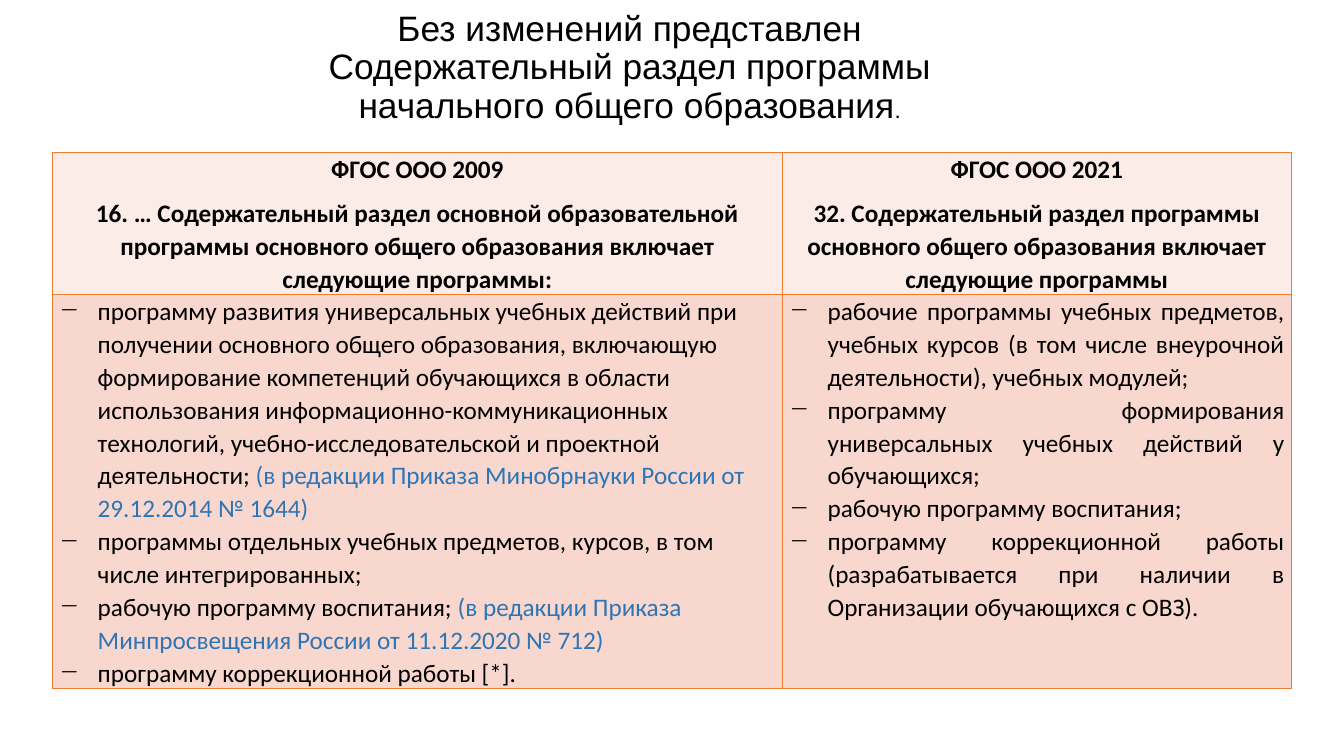
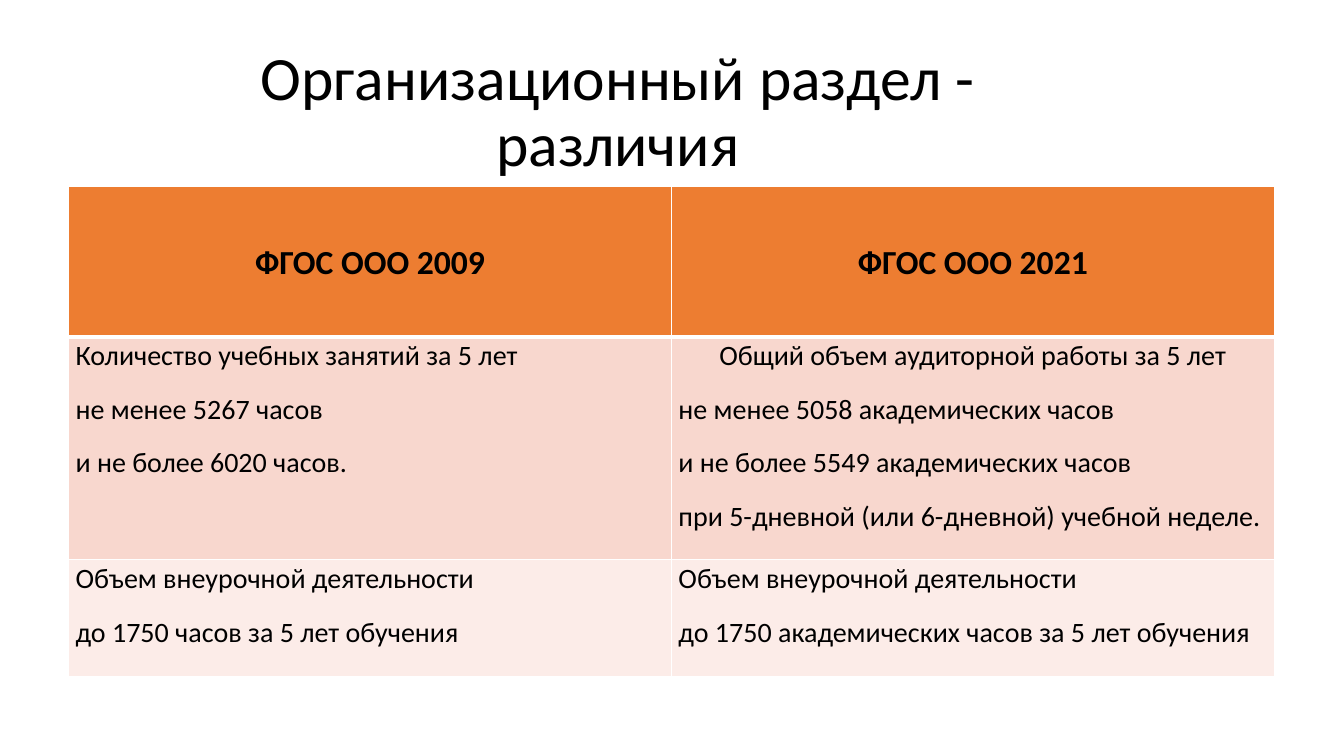
from lxml.etree import SubElement
from pptx import Presentation
from pptx.dml.color import RGBColor
from pptx.enum.text import MSO_ANCHOR as Anchor, PP_ALIGN as Align
from pptx.oxml.ns import qn
from pptx.util import Inches, Pt

# Shared look
SLIDE_W, SLIDE_H = Inches(13.33), Inches(7.5)
BLACK = RGBColor(0x00, 0x00, 0x00)
WHITE = RGBColor(0xFF, 0xFF, 0xFF)
ORANGE = RGBColor(0xED, 0x7D, 0x31)
PEACH = RGBColor(0xF8, 0xD7, 0xCE)
PALE = RGBColor(0xFC, 0xEC, 0xE8)
AMENDMENT_BLUE = RGBColor(0x2E, 0x75, 0xB6)
BODY_FONT = "Calibri"
OLD_STANDARD, NEW_STANDARD = "ФГОС ООО 2009", "ФГОС ООО 2021"

# Content: a tuple is a programme followed by its amendment note
OLD_HEADING = [
    OLD_STANDARD,
    "16. … Содержательный раздел основной образовательной программы "
    "основного общего образования включает следующие программы:",
]
NEW_HEADING = [
    NEW_STANDARD,
    "32. Содержательный раздел программы основного общего образования "
    "включает следующие программы",
]
OLD_PROGRAMMES = [
    ("программу развития универсальных учебных действий при получении основного "
     "общего образования, включающую формирование компетенций обучающихся в области "
     "использования информационно-коммуникационных технологий, "
     "учебно-исследовательской и проектной деятельности; ",
     "(в редакции Приказа Минобрнауки России от 29.12.2014 № 1644)"),
    "программы отдельных учебных предметов, курсов, в том числе интегрированных;",
    ("рабочую программу воспитания; ",
     "(в редакции Приказа Минпросвещения России от 11.12.2020 № 712)"),
    "программу коррекционной работы [*].",
]
NEW_PROGRAMMES = [
    "рабочие программы учебных предметов, учебных курсов "
    "(в том числе внеурочной деятельности), учебных модулей;",
    "программу формирования универсальных учебных действий у обучающихся;",
    "рабочую программу воспитания;",
    "программу коррекционной работы (разрабатывается при наличии "
    "в Организации обучающихся с ОВЗ).",
]
OLD_HOURS = [
    "Количество учебных занятий за 5 лет",
    "не менее 5267 часов",
    "и не более 6020 часов.",
]
NEW_HOURS = [
    "Общий объем аудиторной работы за 5 лет",
    "не менее 5058 академических часов",
    "и не более 5549 академических часов",
    "при 5-дневной (или 6-дневной) учебной неделе.",
]
OLD_EXTRACURRICULAR = [
    "Объем внеурочной деятельности",
    "до 1750 часов за 5 лет обучения",
]
NEW_EXTRACURRICULAR = [
    "Объем внеурочной деятельности",
    "до 1750 академических часов за 5 лет обучения",
]


# Lengths as percentages of the slide
def across(percent):
    return int(SLIDE_W * percent / 100)


def down(percent):
    return int(SLIDE_H * percent / 100)


def style_font(paragraph, size, name=BODY_FONT, bold=False):
    font = paragraph.font
    font.name, font.size, font.bold = name, Pt(size), bold
    font.color.rgb = BLACK


def add_title(slide, left, top, width, height, text, size, name=BODY_FONT):
    frame = slide.shapes.add_textbox(
        across(left), down(top), across(width), down(height)).text_frame
    frame.word_wrap = True
    frame.vertical_anchor = Anchor.MIDDLE
    frame.margin_top = frame.margin_bottom = 0
    title = frame.paragraphs[0]
    title.alignment = Align.CENTER
    title.line_spacing = 0.9
    style_font(title, size, name)
    title.add_run().text = text
    return title


def add_table(slide, left, top, columns, rows):
    table = slide.shapes.add_table(
        len(rows), len(columns), across(left), down(top),
        across(sum(columns)), down(sum(rows))).table
    table.first_row = table.horz_banding = False
    for column, share in zip(table.columns, columns):
        column.width = across(share)
    for row, share in zip(table.rows, rows):
        row.height = down(share)
    return table


def style_cell(cell, fill, border, bottom=1, top=1):
    cell.margin_left = cell.margin_right = Inches(0.07)
    cell.margin_top = cell.margin_bottom = 0
    properties = cell._tc.get_or_add_tcPr()
    for side, width in (("L", 1), ("R", 1), ("T", top), ("B", bottom)):
        line = SubElement(properties, qn(f"a:ln{side}"), w=str(Pt(width)))
        paint = SubElement(line, qn("a:solidFill"))
        SubElement(paint, qn("a:srgbClr"), val=str(border))
    cell.fill.solid()
    cell.fill.fore_color.rgb = fill


def add_dash(paragraph):
    properties = paragraph._p.get_or_add_pPr()
    indent = Inches(0.38)
    properties.set("marL", str(indent))
    properties.set("indent", str(-indent))
    SubElement(properties, qn("a:buChar"), char="−")


def write_cell(cell, lines, size, align, after=0, bold=False, dashed=False):
    frame = cell.text_frame
    for index, line in enumerate(lines):
        paragraph = frame.add_paragraph() if index else frame.paragraphs[0]
        paragraph.alignment = align
        paragraph.line_spacing = 1.07
        paragraph.space_after = Pt(after)
        if dashed:
            add_dash(paragraph)
        style_font(paragraph, size, bold=bold)
        text, *notes = (line,) if isinstance(line, str) else line
        paragraph.add_run().text = text
        for note in notes:
            run = paragraph.add_run()
            run.text = note
            run.font.color.rgb = AMENDMENT_BLUE


def build_content_section(slide):
    title = add_title(
        slide, 18.53, 1.33, 56.64, 15.47,
        "Без изменений представлен Содержательный раздел программы "
        "начального общего образования", 25.2, "Arial")
    full_stop = title.add_run()
    full_stop.text = "."
    full_stop.font.size = Pt(16.2)

    table = add_table(slide, 3.9, 20.13, (54.31, 37.88), (18.8, 52.13))
    columns = ((OLD_HEADING, OLD_PROGRAMMES, Align.LEFT),
               (NEW_HEADING, NEW_PROGRAMMES, Align.JUSTIFY))
    for index, (heading, programmes, align) in enumerate(columns):
        head, body = table.cell(0, index), table.cell(1, index)
        style_cell(head, PALE, ORANGE)
        write_cell(head, heading, 18, Align.CENTER, after=8, bold=True)
        style_cell(body, PEACH, ORANGE)
        write_cell(body, programmes, 18, align, dashed=True)


def build_organisation_section(slide):
    add_title(slide, 18.3, 5.33, 55.36, 19.33,
              "Организационный раздел - различия", 44)

    table = add_table(slide, 5.1, 24.67, (44.86, 44.86), (19.87, 29.47, 15.47))
    columns = ((OLD_STANDARD, OLD_HOURS, OLD_EXTRACURRICULAR),
               (NEW_STANDARD, NEW_HOURS, NEW_EXTRACURRICULAR))
    for index, (standard, hours, extracurricular) in enumerate(columns):
        head = table.cell(0, index)
        style_cell(head, ORANGE, WHITE, bottom=3)
        head.vertical_anchor = Anchor.MIDDLE
        write_cell(head, [standard], 24, Align.CENTER, bold=True)
        bodies = ((hours, PEACH, 3), (extracurricular, PALE, 1))
        for row, (lines, fill, top) in enumerate(bodies, start=1):
            body = table.cell(row, index)
            style_cell(body, fill, WHITE, top=top)
            write_cell(body, lines, 20, Align.JUSTIFY, after=12)
    # The opening line on the new standard is centred
    table.cell(1, 1).text_frame.paragraphs[0].alignment = Align.CENTER


def main():
    deck = Presentation()
    deck.slide_width, deck.slide_height = SLIDE_W, SLIDE_H
    blank = deck.slide_layouts[6]
    for build in (build_content_section, build_organisation_section):
        build(deck.slides.add_slide(blank))
    deck.save("out.pptx")


if __name__ == "__main__":
    main()
